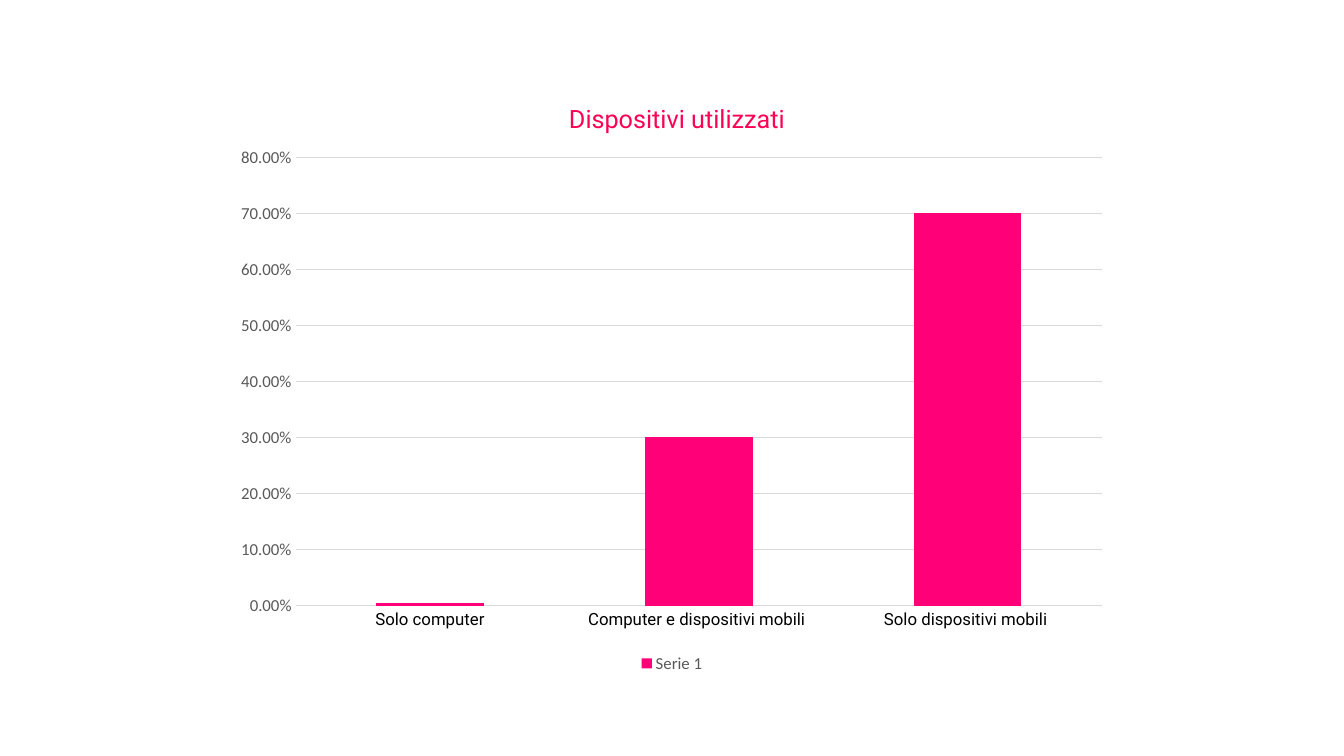
from dataclasses import dataclass

from lxml.etree import SubElement
from pptx import Presentation
from pptx.chart.data import CategoryChartData
from pptx.dml.color import RGBColor
from pptx.enum.chart import XL_CHART_TYPE, XL_LEGEND_POSITION, XL_TICK_MARK
from pptx.oxml.ns import qn
from pptx.util import Inches, Pt


@dataclass(frozen=True)
class Theme:
    title_color: str = "FF0054"
    bar_color: str = "FF0078"
    label_color: str = "000000"
    muted_color: str = "595959"
    grid_color: str = "D9D9D9"
    heading_font: str = "Roboto"
    body_font: str = "Calibri"
    title_size: float = 18
    label_size: float = 12
    line_width: float = 0.75


class ChartPage:
    def __init__(self, deck, theme):
        self.theme = theme
        self.page = deck.slides.add_slide(deck.slide_layouts[6])

    def style_font(self, font, name, size, color):
        for key, value in {"name": name, "size": Pt(size), "bold": False}.items():
            setattr(font, key, value)
        font.color.rgb = RGBColor.from_string(color)

    def style_line(self, line):
        line.color.rgb = RGBColor.from_string(self.theme.grid_color)
        line.width = Pt(self.theme.line_width)

    def place(self, element, settings):
        layout = element.find(qn("c:layout"))
        if layout is None:
            layout = element.makeelement(qn("c:layout"))
            text = element.find(qn("c:tx"))
            element.insert(0 if text is None else 1, layout)
        manual = SubElement(layout, qn("c:manualLayout"))
        for key, value in settings.items():
            SubElement(manual, qn(f"c:{key}")).set("val", str(value))

    def add_title(self, chart, text):
        theme = self.theme
        chart.has_title = True
        title = chart.chart_title
        title.include_in_layout = False
        para = title.text_frame.paragraphs[0]
        span = para.add_run()
        span.text = text
        self.style_font(span.font, theme.heading_font, theme.title_size, theme.title_color)
        self.place(title._element, {"xMode": "edge", "yMode": "edge", "x": 0.38, "y": 0.03})

    def add_columns(self, title, series_name, values, box):
        theme = self.theme
        data = CategoryChartData(number_format="0.00%")
        data.categories = list(values)
        data.add_series(series_name, values.values())
        frame = self.page.shapes.add_chart(
            XL_CHART_TYPE.COLUMN_STACKED, *map(Inches, box), data)
        chart = frame.chart
        self.style_font(chart.font, theme.body_font, theme.label_size, theme.muted_color)
        self.add_title(chart, title)

        plot = chart.plots[0]
        for key, value in {"gap_width": 150, "overlap": 100, "vary_by_categories": False}.items():
            setattr(plot, key, value)
        fill = plot.series[0].format.fill
        fill.solid()
        fill.fore_color.rgb = RGBColor.from_string(theme.bar_color)

        categories, scale = chart.category_axis, chart.value_axis
        for axis, font, color in (
            (categories, theme.heading_font, theme.label_color),
            (scale, theme.body_font, theme.muted_color),
        ):
            axis.major_tick_mark = axis.minor_tick_mark = XL_TICK_MARK.NONE
            self.style_font(axis.tick_labels.font, font, theme.label_size, color)
        self.style_line(categories.format.line)
        scale.format.line.fill.background()
        for key, value in {"minimum_scale": 0, "maximum_scale": 0.8,
                           "major_unit": 0.1, "has_major_gridlines": True}.items():
            setattr(scale, key, value)
        self.style_line(scale.major_gridlines.format.line)
        scale.tick_labels.number_format = "0.00%"
        scale.tick_labels.number_format_is_linked = False

        chart.has_legend = True
        chart.legend.position = XL_LEGEND_POSITION.BOTTOM
        chart.legend.include_in_layout = False
        self.style_font(chart.legend.font, theme.body_font, theme.label_size, theme.muted_color)
        plot_area = chart.element.find(qn("c:chart")).find(qn("c:plotArea"))
        self.place(plot_area, {"layoutTarget": "inner", "xMode": "edge", "yMode": "edge",
                               "x": 0.08, "y": 0.13, "w": 0.9, "h": 0.75})


def main():
    deck = Presentation()
    deck.slide_width, deck.slide_height = Inches(13.33), Inches(7.5)
    page = ChartPage(deck, Theme())
    devices = {
        "Solo computer": 0.004,
        "Computer e dispositivi mobili ": 0.3,
        "Solo dispositivi mobili ": 0.7,
    }
    page.add_columns("Dispositivi utilizzati", "Serie 1", devices, (2.22, 0.79, 8.89, 5.93))
    deck.save("out.pptx")


if __name__ == "__main__":
    main()
